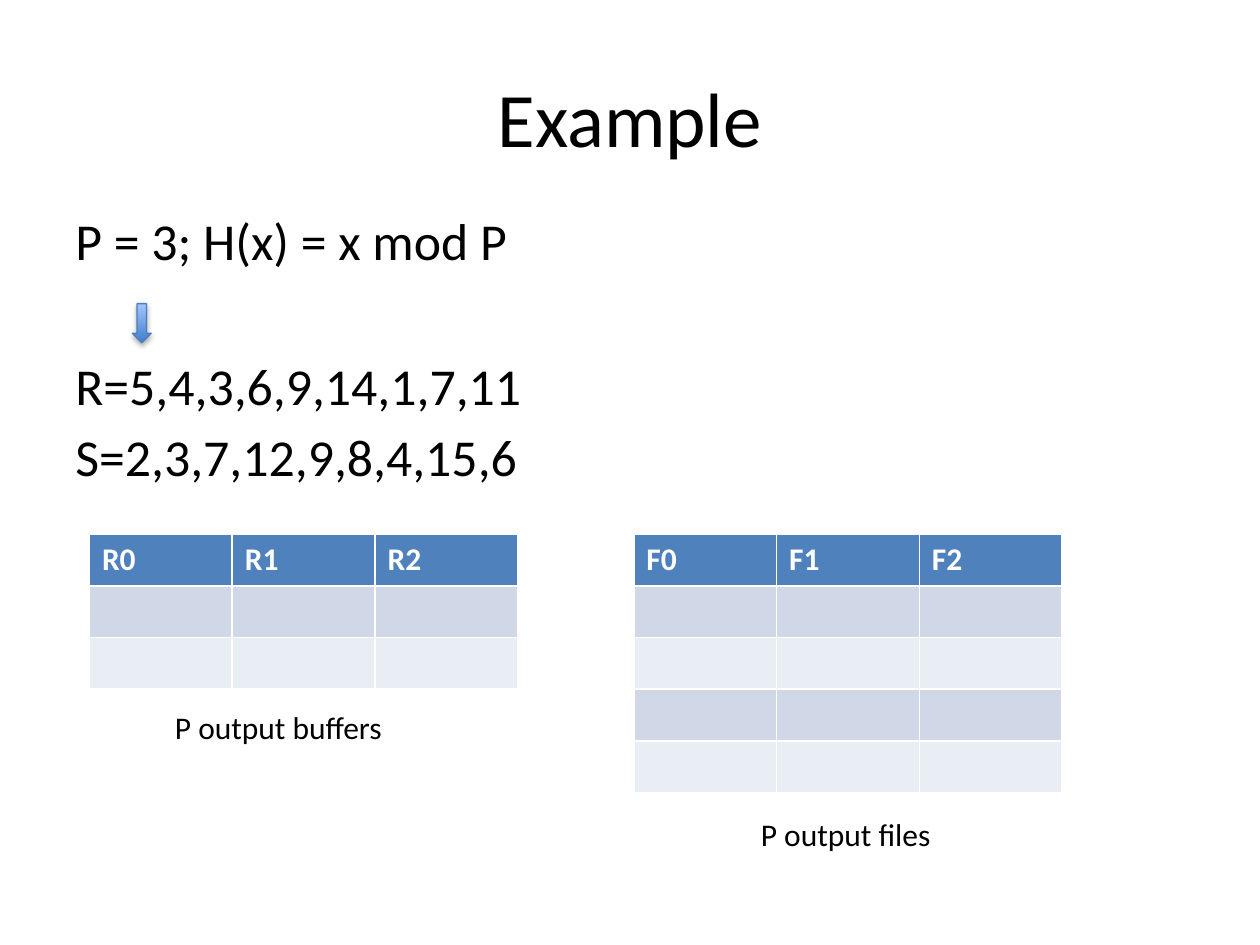
from lxml import etree
from pptx import Presentation
from pptx.dml.color import RGBColor
from pptx.enum.shapes import MSO_SHAPE as Shape
from pptx.enum.text import MSO_ANCHOR as Anchor, PP_ALIGN as Align
from pptx.oxml import parse_xml
from pptx.util import Inches, Pt

BLACK = RGBColor(0x00, 0x00, 0x00)
WHITE = RGBColor(0xFF, 0xFF, 0xFF)
HEADER = RGBColor(0x4F, 0x81, 0xBD)
BANDS = [RGBColor(0xD0, 0xD8, 0xE8), RGBColor(0xE9, 0xED, 0xF4)]
ARROW_DARK = RGBColor(0x3F, 0x80, 0xCE)
ARROW_LIGHT = RGBColor(0xA4, 0xC4, 0xFF)
ARROW_LINE = RGBColor(0x4B, 0x7E, 0xBC)


def style_text(para, size, color=BLACK, bold=False):
    for span in para.runs:
        span.font.name = "Calibri"
        span.font.size = Pt(size)
        span.font.color.rgb = color
        span.font.bold = bold


def add_text(page, left, top, width, height, text, size):
    box = page.shapes.add_textbox(Inches(left), Inches(top), Inches(width), Inches(height))
    box.text_frame.word_wrap = True
    box.text_frame.text = text
    for para in box.text_frame.paragraphs:
        style_text(para, size)
    return box


deck = Presentation()
deck.slide_width, deck.slide_height = Inches(10), Inches(7.5)
page = deck.slides.add_slide(deck.slide_layouts[5])

# Title
title = page.shapes.title
title.left, title.top = Inches(0.5), Inches(0.3)
title.width, title.height = Inches(9), Inches(1.25)
title.text_frame.text = "Example"
title.text_frame.vertical_anchor = Anchor.MIDDLE
title.text_frame.paragraphs[0].alignment = Align.CENTER
style_text(title.text_frame.paragraphs[0], 44)

# Hash function and input relations, with room for the arrow
lines = ["P = 3; H(x) = x mod P", "R=5,4,3,6,9,14,1,7,11", "S=2,3,7,12,9,8,4,15,6"]
body = add_text(page, 0.5, 1.61, 9, 2.21, "\n".join(lines), 29.6)
for para, gap in zip(body.text_frame.paragraphs, [0, 47, 5]):
    para.space_before = Pt(gap)

# Tables of buffers and files: letter, left edge, row count
for letter, left, row_count in [("R", 0.71, 3), ("F", 5.03, 5)]:
    frame = page.shapes.add_table(row_count, 3, Inches(left), Inches(4.24),
                                  Inches(3.4), Inches(0.41 * row_count))
    for r, row in enumerate(frame.table.rows):
        for c, cell in enumerate(row.cells):
            cell.fill.solid()
            cell.fill.fore_color.rgb = BANDS[(r - 1) % 2] if r else HEADER
            if r == 0:
                cell.text_frame.text = f"{letter}{c}"
                style_text(cell.text_frame.paragraphs[0], 18, WHITE, True)

# Arrow at the current tuple
arrow = page.shapes.add_shape(Shape.DOWN_ARROW, Inches(1.05), Inches(2.41),
                              Inches(0.15), Inches(0.31))
arrow.fill.gradient()
arrow.fill.gradient_angle = 90
for stop, color, position in zip(arrow.fill.gradient_stops, [ARROW_DARK, ARROW_LIGHT], [0, 1]):
    stop.color.rgb = color
    stop.position = position
arrow.line.color.rgb = ARROW_LINE
arrow.line.width = Pt(0.75)
arrow.shadow.inherit = False
effects = arrow._element.spPr.find("{*}effectLst")
effects.append(parse_xml(
    '<a:outerShdw xmlns:a="http://schemas.openxmlformats.org/drawingml/2006/main" '
    f'blurRad="{Pt(3.1)}" dist="{Pt(1.8)}" dir="5400000" rotWithShape="0">'
    '<a:srgbClr val="000000"><a:alpha val="35000"/></a:srgbClr></a:outerShdw>'))

# Captions
add_text(page, 1.29, 5.57, 2.33, 0.41, "P output buffers", 18)
add_text(page, 5.94, 6.42, 2.33, 0.41, "P output files", 18)

deck.save("out.pptx")
